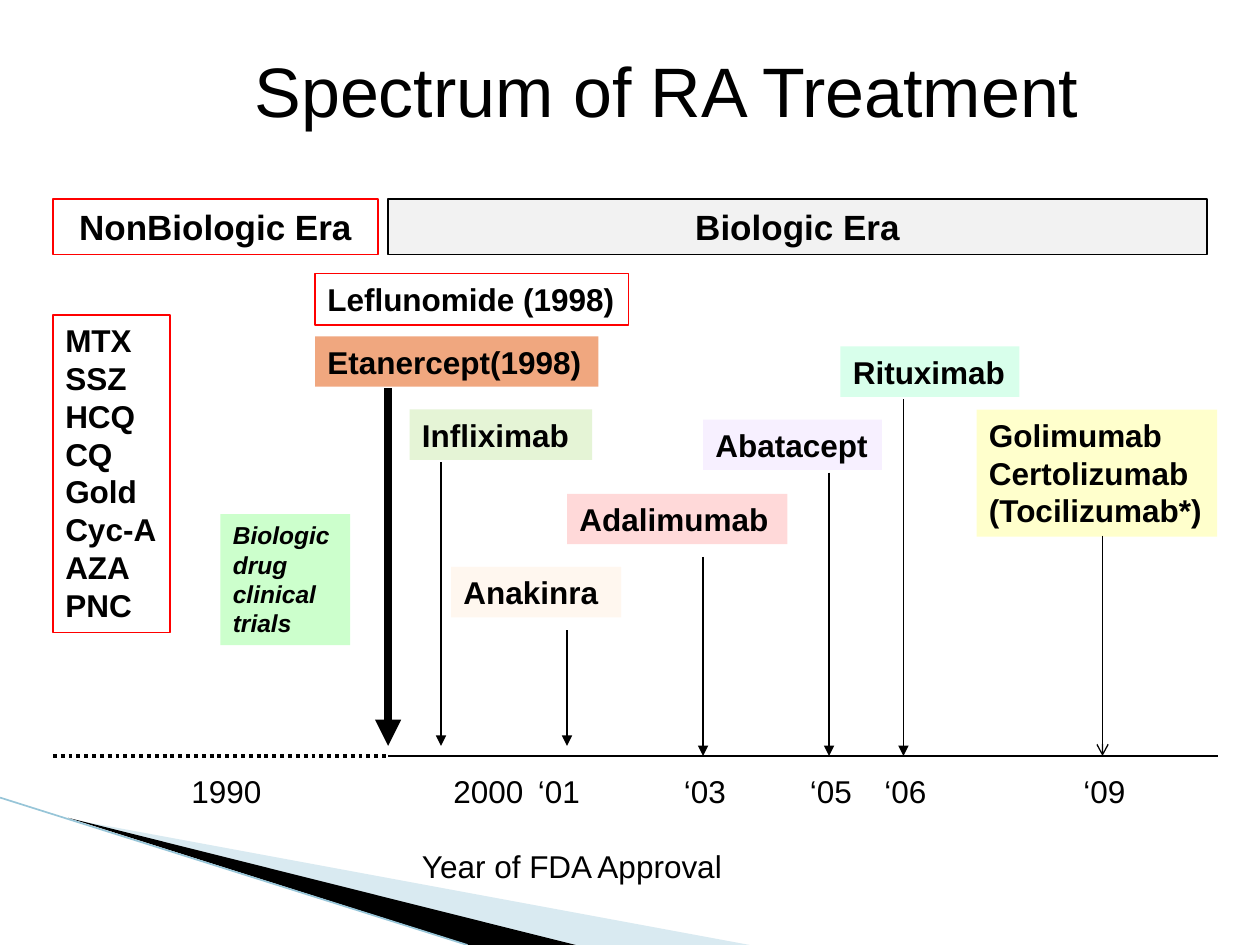
from lxml import etree
from pptx import Presentation
from pptx import util as u
from pptx.dml.color import RGBColor
from pptx.enum import dml, shapes, text
from pptx.oxml.ns import qn

BLACK = RGBColor(0x00, 0x00, 0x00)
RED = RGBColor(0xFF, 0x00, 0x00)
GREY = RGBColor(0xF2, 0xF2, 0xF2)
PALE_BLUE = RGBColor(0xA0, 0xCB, 0xDC)
EDGE_BLUE = RGBColor(0x97, 0xC5, 0xD8)
ORANGE = RGBColor(0xE5, 0x5D, 0x14)
LIME = RGBColor(0x92, 0xD0, 0x50)
VIOLET = RGBColor(0xCC, 0x99, 0xFF)
MINT = RGBColor(0x99, 0xFF, 0xCC)
PEACH = RGBColor(0xFF, 0x99, 0x33)
PALE_GREEN = RGBColor(0xCC, 0xFF, 0xCC)
PALE_YELLOW = RGBColor(0xFF, 0xFF, 0xCC)

AXIS_Y = 6
BIOLOGIC_START = 3.08
YEAR_TOP = 6.08


class Deck:
    def __init__(self, slide):
        self.s = slide
        self.font = {"name": "Arial", "size": u.Pt(18)}

    def fill_text(self, sp, lines, wrap=False, align=None, **fmt):
        tf = sp.text_frame
        tf.word_wrap = wrap
        tf.auto_size = text.MSO_AUTO_SIZE.SHAPE_TO_FIT_TEXT
        tf.vertical_anchor = text.MSO_ANCHOR.TOP
        for i, line in enumerate(lines):
            p = tf.paragraphs[0] if i == 0 else tf.add_paragraph()
            p.alignment = align or text.PP_ALIGN.LEFT
            r = p.add_run()
            r.text = line
            r.font.color.rgb = BLACK
            for key, value in {**self.font, **fmt}.items():
                setattr(r.font, key, value)

    def paint(self, sp, fill, opacity=100):
        if fill is None:
            sp.fill.background()
            return
        sp.fill.solid()
        sp.fill.fore_color.rgb = fill
        if opacity < 100:
            clr = sp._element.spPr.find(qn("a:solidFill")).find(qn("a:srgbClr"))
            etree.SubElement(clr, qn("a:alpha"), val=str(opacity * 1000))

    def title(self, line, *at):
        sp = self.s.shapes.title
        sp.left, sp.top, sp.width, sp.height = map(u.Inches, at)
        self.fill_text(sp, [line], size=u.Pt(40))

    def label(self, line, *at):
        self.fill_text(self.s.shapes.add_textbox(*map(u.Inches, at)), [line])

    def box(self, lines, at, fill=None, opacity=100, line=None, **fmt):
        sp = self.s.shapes.add_shape(shapes.MSO_SHAPE.RECTANGLE, *map(u.Inches, at))
        sp.shadow.inherit = False
        self.paint(sp, fill, opacity)
        if line is None:
            sp.line.fill.background()
        else:
            sp.line.color.rgb = line
            sp.line.width = u.Pt(0.75)
        self.fill_text(sp, lines, bold=True, **fmt)

    def line(self, x1, y1, x2, y2, width=0.75, color=BLACK, dash=None, head=None):
        c = self.s.shapes.add_connector(
            shapes.MSO_CONNECTOR.STRAIGHT, *map(u.Inches, (x1, y1, x2, y2)))
        c.line.color.rgb = color
        c.line.width = u.Pt(width)
        if dash:
            c.line.dash_style = dash
        if head:
            ln = c._element.spPr.find(qn("a:ln"))
            etree.SubElement(ln, qn("a:tailEnd"), type=head)
        etree.SubElement(c._element.spPr, qn("a:effectLst"))

    def wedge(self, points, fill, opacity=100):
        start, *rest = [(u.Inches(x), u.Inches(y)) for x, y in points]
        fb = self.s.shapes.build_freeform(*start)
        fb.add_line_segments(rest, close=True)
        sp = fb.convert_to_shape()
        sp.shadow.inherit = False
        self.paint(sp, fill, opacity)
        sp.line.fill.background()


def main():
    prs = Presentation()
    prs.slide_width, prs.slide_height = u.Inches(10), u.Inches(7.5)
    d = Deck(prs.slides.add_slide(prs.slide_layouts[5]))

    # Corner decoration
    d.wedge([(0.55, 6.5), (5.95, 7.5), (4.56, 7.5)], PALE_BLUE, 40)
    d.wedge([(0.54, 6.49), (4.57, 7.5), (3.72, 7.5)], BLACK)
    d.line(0, 6.33, 3.71, 7.5, 0.95, EDGE_BLUE)

    d.title("Spectrum of RA Treatment", 1.92, 0.33, 6.81, 0.77)

    # Era headers
    era = {"wrap": True, "align": text.PP_ALIGN.CENTER, "size": u.Pt(20)}
    d.box(["NonBiologic Era"], (0.42, 1.58, 2.58, 0.44), line=RED, **era)
    d.box(["Biologic Era"], (BIOLOGIC_START, 1.58, 6.5, 0.44), GREY, line=BLACK, **era)

    # Non-biologic drugs and trials
    d.box(["MTX", "SSZ", "HCQ", "CQ", "Gold", "Cyc-A", "AZA", "PNC"],
          (0.42, 2.5, 0.93, 2.52), line=RED)
    d.box(["Leflunomide (1998)"], (2.5, 2.17, 2.49, 0.41), line=RED)
    d.box(["Biologic", "drug", "clinical", "trials"], (1.75, 4.08, 1.03, 1.04),
          PALE_GREEN, italic=True, size=u.Pt(14))

    # Biologic drugs: name, left, top, width, fill, opacity, wrap
    for name, left, top, width, fill, opacity, wrap in [
        ("Etanercept(1998)", 2.5, 2.67, 2.25, ORANGE, 54, True),
        ("Infliximab", 3.25, 3.25, 1.45, LIME, 23, False),
        ("Anakinra", 3.58, 4.5, 1.35, PEACH, 8, False),
        ("Adalimumab", 4.5, 3.92, 1.75, RED, 15, True),
        ("Abatacept", 5.58, 3.33, 1.42, VIOLET, 14, False),
        ("Rituximab", 6.67, 2.75, 1.42, MINT, 38, False),
    ]:
        d.box([name], (left, top, width, 0.4), fill, opacity, wrap=wrap)
    d.box(["Golimumab", "Certolizumab", "(Tocilizumab*)"],
          (7.75, 3.25, 1.91, 1.01), PALE_YELLOW)

    # Time axis
    d.line(0.42, AXIS_Y, BIOLOGIC_START, AXIS_Y, 2.25,
           dash=dml.MSO_LINE.ROUND_DOT)
    d.line(BIOLOGIC_START, AXIS_Y, 9.67, AXIS_Y)

    # Approval arrows: x, top, bottom, width, head
    for x, top, bottom, width, head in [
        (BIOLOGIC_START, 3.08, 5.92, 5, "triangle"),
        (3.5, 3.67, 5.92, 0.75, "triangle"),
        (4.5, 5, 5.92, 0.75, "triangle"),
        (5.58, 4.42, AXIS_Y, 0.75, "triangle"),
        (6.58, 3.75, AXIS_Y, 0.75, "triangle"),
        (7.17, 3.17, AXIS_Y, 0.75, "triangle"),
        (8.75, 4.25, AXIS_Y, 0.75, "arrow"),
    ]:
        d.line(x, top, x, bottom, width, head=head)

    # Years and axis caption
    for year, left in [("1990", 1.42), ("2000", 3.5), ("‘01", 4.17), ("‘03", 5.33),
                       ("‘05", 6.33), ("‘06", 6.92), ("‘09", 8.5)]:
        d.label(year, left, YEAR_TOP, 0.76 if len(year) == 4 else 0.54, 0.4)
    d.label("Year of FDA Approval", 3.25, 6.67, 2.61, 0.4)

    prs.save("out.pptx")


if __name__ == "__main__":
    main()
